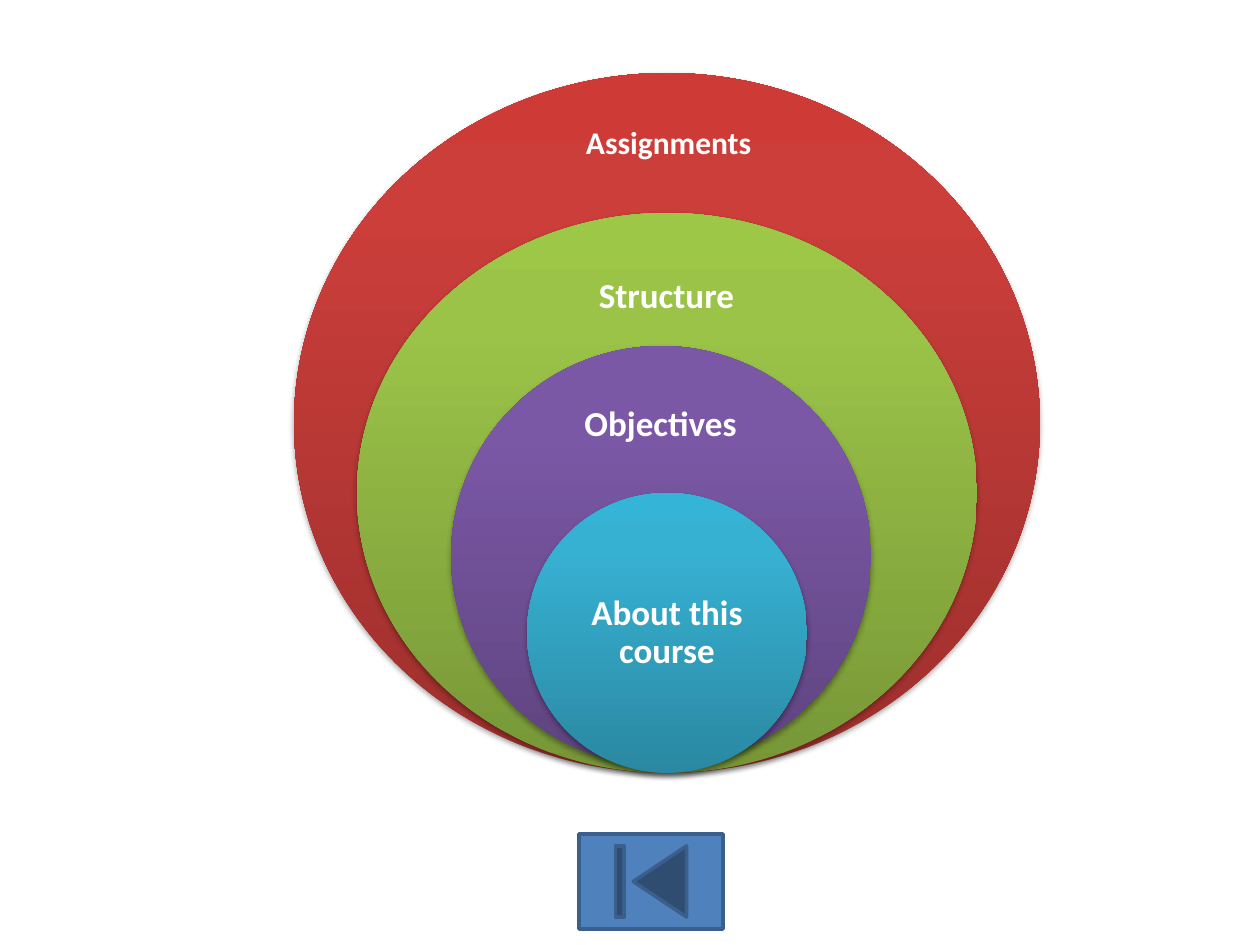
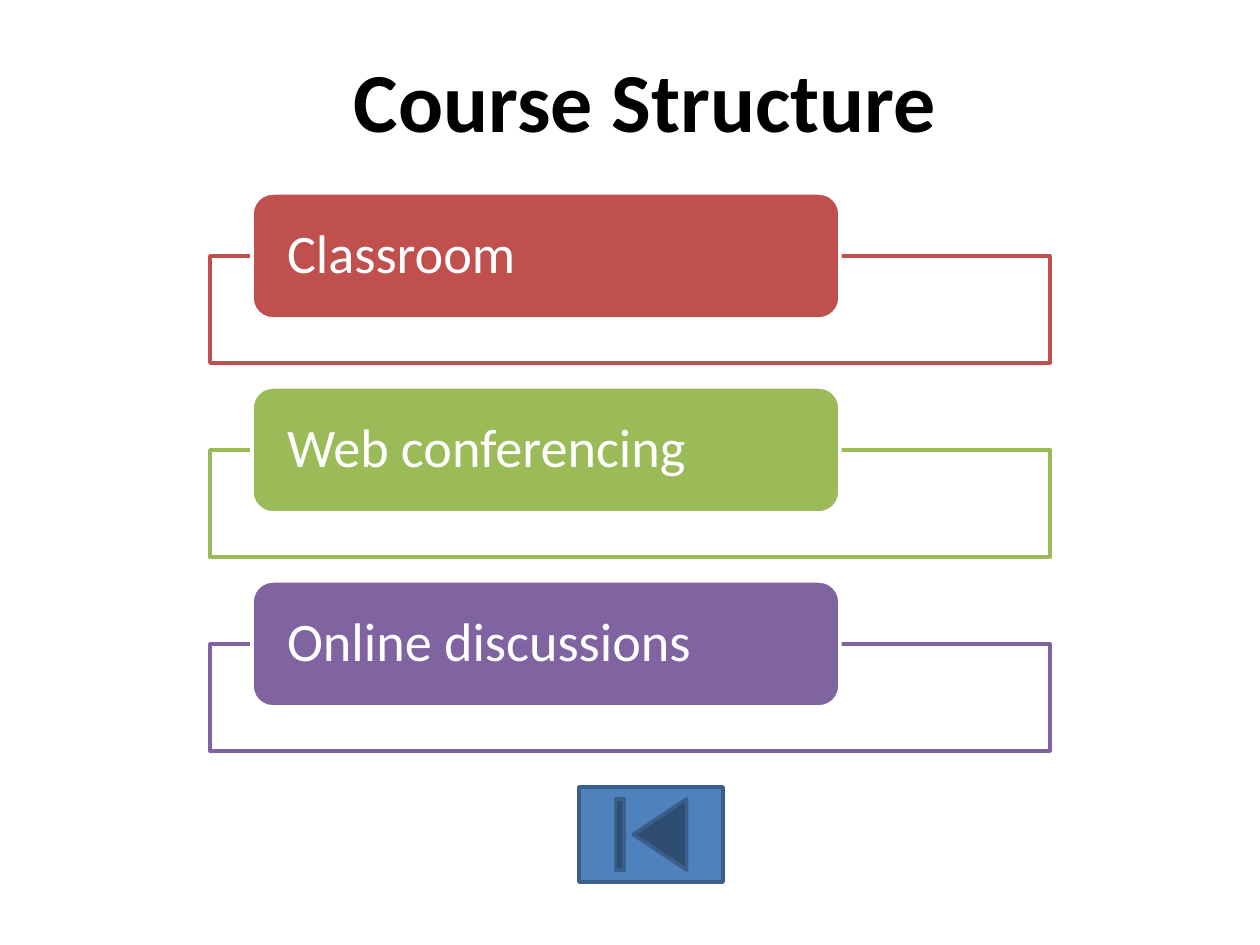
"""Builds two course overview slides: nested topic circles and a list of course formats."""
import copy

import lxml.etree
import pptx
import pptx.dml.color
import pptx.enum.shapes
import pptx.enum.text
import pptx.oxml.ns
import pptx.util

SHAPE = pptx.enum.shapes.MSO_SHAPE
ALIGN = pptx.enum.text.PP_ALIGN
ANCHOR = pptx.enum.text.MSO_ANCHOR
qn = pptx.oxml.ns.qn

PX = 914400 / 126
FONT = "Calibri"
COLORS = {
    "white": "FFFFFF",
    "black": "000000",
    "button": "4F81BD",
    "button_edge": "3A5F8C",
    "red": "C0504D",
    "green": "9BBB59",
    "purple": "8064A2",
}
GRADIENTS = {
    "red": ("9C2F2D", "CB3E3A", "CE3B37"),
    "green": ("779737", "9BC348", "9DC746"),
    "purple": ("5F4480", "7B58A6", "7C57A8"),
    "aqua": ("2A88A2", "37B1D2", "34B4D6"),
}
STOPS = (0, 0.8, 1)
TITLE_ONLY, BLANK = 5, 6


def rgb(value):
    return pptx.dml.color.RGBColor.from_string(value)


def emu(*lengths):
    return [pptx.util.Emu(round(length * PX)) for length in lengths]


class Deck:
    def __init__(self):
        self.prs = pptx.Presentation()
        self.prs.slide_width = pptx.util.Inches(10)
        self.prs.slide_height = pptx.util.Inches(7.5)
        self.slide = None

    def new_slide(self, layout):
        self.slide = self.prs.slides.add_slide(self.prs.slide_layouts[layout])

    def set_text(self, frame, text, size, color="white", bold=False, align=ALIGN.CENTER,
                 anchor=ANCHOR.MIDDLE, insets=(13, 6), spacing=0.9, wrap=True):
        frame.word_wrap = wrap
        frame.auto_size = pptx.enum.text.MSO_AUTO_SIZE.NONE
        frame.vertical_anchor = anchor
        side, edge = emu(*insets)
        frame.margin_left = frame.margin_right = side
        frame.margin_top = frame.margin_bottom = edge
        paragraph = frame.paragraphs[0]
        paragraph.text = text
        paragraph.alignment = align
        paragraph.line_spacing = spacing
        paragraph.font.name = FONT
        paragraph.font.size = pptx.util.Pt(size)
        paragraph.font.bold = bold
        paragraph.font.color.rgb = rgb(COLORS[color])

    def title(self, text, box):
        heading = self.slide.shapes.title
        heading.left, heading.top, heading.width, heading.height = emu(*box)
        self.set_text(heading.text_frame, text, 48, "black", bold=True,
                      anchor=ANCHOR.TOP, spacing=1.0)

    def label(self, text, box, size, **style):
        caption = self.slide.shapes.add_textbox(*emu(*box))
        self.set_text(caption.text_frame, text, size, bold=True, **style)

    def shape(self, kind, box, fill, line):
        shape = self.slide.shapes.add_shape(kind, *emu(*box))
        shape.shadow.inherit = False
        shape.fill.solid()
        shape.fill.fore_color.rgb = rgb(COLORS[fill])
        shape.line.color.rgb = rgb(COLORS[line])
        shape.line.width = pptx.util.Pt(2)
        return shape

    def circle(self, box, gradient):
        circle = self.slide.shapes.add_shape(SHAPE.OVAL, *emu(*box))
        circle.line.fill.background()
        circle.fill.gradient()
        circle.fill.gradient_angle = 90
        properties = circle._element.spPr
        stop_list = properties.find(".//" + qn("a:gsLst"))
        stop_list.insert(1, copy.deepcopy(stop_list[0]))
        for stop, position, color in zip(circle.fill.gradient_stops, STOPS, GRADIENTS[gradient]):
            stop.position = position
            stop.color.rgb = rgb(color)
        circle.shadow.inherit = False
        shadow = lxml.etree.SubElement(
            properties.find(qn("a:effectLst")), qn("a:outerShdw"),
            blurRad="39400", dist="22900", dir="5400000", rotWithShape="0")
        tint = lxml.etree.SubElement(shadow, qn("a:srgbClr"), val=COLORS["black"])
        lxml.etree.SubElement(tint, qn("a:alpha"), val="35000")

    def format_row(self, text, top, color):
        frame = self.shape(SHAPE.RECTANGLE, (210, top + 63, 840, 107), "white", color)
        tint = frame._element.spPr.find(qn("a:solidFill"))[0]
        lxml.etree.SubElement(tint, qn("a:alpha"), val="90000")
        card = self.shape(SHAPE.ROUNDED_RECTANGLE, (252, top, 588, 126), color, "white")
        self.set_text(card.text_frame, text, 31, align=ALIGN.LEFT, insets=(29, 6))

    def back_button(self, top):
        self.shape(SHAPE.ACTION_BUTTON_BEGINNING, (579, top, 144, 95), "button", "button_edge")


def build_topics(deck):
    deck.new_slide(BLANK)
    deck.circle((294, 73, 746, 700), "red")
    deck.circle((357, 213, 620, 560), "green")
    deck.label("Structure", (558, 247, 217, 101), 20, insets=(20, 20))
    deck.circle((451, 346, 420, 420), "purple")
    deck.label("Objectives", (563, 378, 195, 95), 20, insets=(20, 20))
    deck.circle((527, 493, 280, 280), "aqua")
    deck.label("About this course", (568, 563, 198, 140), 20, insets=(20, 20))
    deck.label("Assignments", (573, 117, 192, 89), 18, align=ALIGN.LEFT,
               anchor=ANCHOR.TOP, spacing=1.0, wrap=False)
    deck.back_button(834)


def build_structure(deck):
    deck.new_slide(TITLE_ONLY)
    deck.title("Course Structure", (262, 42, 766, 115))
    formats = (("Classroom", "red"), ("Web conferencing", "green"),
               ("Online discussions", "purple"))
    for index, (name, color) in enumerate(formats):
        deck.format_row(name, 193 + 194 * index, color)
    deck.back_button(787)


def main():
    deck = Deck()
    build_topics(deck)
    build_structure(deck)
    deck.prs.save("out.pptx")


if __name__ == "__main__":
    main()
